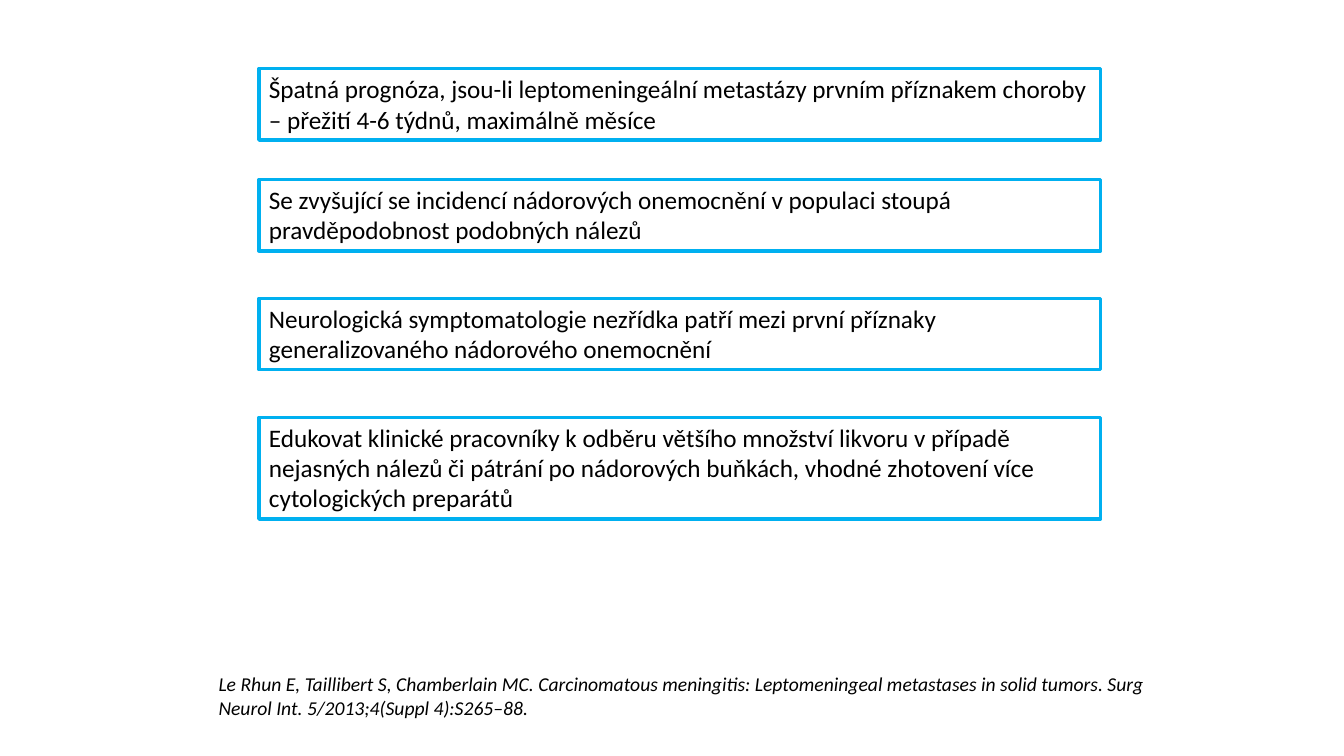
from dataclasses import dataclass

from pptx import Presentation
from pptx.dml.color import RGBColor
from pptx.enum.shapes import MSO_SHAPE
from pptx.enum.text import MSO_ANCHOR, MSO_AUTO_SIZE, PP_ALIGN
from pptx.util import Pt

RECTANGLE = MSO_SHAPE.RECTANGLE
TOP = MSO_ANCHOR.TOP
FIT_SHAPE = MSO_AUTO_SIZE.SHAPE_TO_FIT_TEXT
LEFT = PP_ALIGN.LEFT


@dataclass(frozen=True)
class Theme:
    font: str = "Calibri"
    text: RGBColor = RGBColor(0x00, 0x00, 0x00)
    border: RGBColor = RGBColor(0x00, 0xB0, 0xF0)
    border_width: float = 2.5
    conclusion_size: int = 18
    citation_size: int = 14


THEME = Theme()

CONCLUSION_LEFT = 185
CONCLUSION_WIDTH = 601.2
CONCLUSIONS = [
    (49, 51, "Špatná prognóza, jsou-li leptomeningeální metastázy prvním příznakem choroby "
             "– přežití 4-6 týdnů, maximálně měsíce"),
    (128.2, 51, "Se zvyšující se incidencí nádorových onemocnění v populaci stoupá "
                "pravděpodobnost podobných nálezů"),
    (213.1, 51, "Neurologická symptomatologie nezřídka patří mezi první příznaky "
                "generalizovaného nádorového onemocnění"),
    (298.1, 72.7, "Edukovat klinické pracovníky k odběru většího množství likvoru v případě "
                  "nejasných nálezů či pátrání po nádorových buňkách, vhodné zhotovení více "
                  "cytologických preparátů"),
]
CITATION = (
    "Le Rhun E, Taillibert S, Chamberlain MC. Carcinomatous meningitis: Leptomeningeal "
    "metastases in solid tumors. Surg Neurol Int. 5/2013;4(Suppl 4):S265–88."
)


def write_text(frame, text, size, italic=False):
    frame.word_wrap = True
    frame.auto_size = FIT_SHAPE
    frame.vertical_anchor = TOP
    paragraph = frame.paragraphs[0]
    paragraph.alignment = LEFT
    run = paragraph.add_run()
    run.text = text
    run.font.name = THEME.font
    run.font.size = Pt(size)
    run.font.italic = italic
    run.font.color.rgb = THEME.text


def add_conclusion(slide, top, height, text):
    conclusion = slide.shapes.add_shape(
        RECTANGLE, Pt(CONCLUSION_LEFT), Pt(top), Pt(CONCLUSION_WIDTH), Pt(height)
    )
    conclusion.shadow.inherit = False
    conclusion.fill.background()
    conclusion.line.color.rgb = THEME.border
    conclusion.line.width = Pt(THEME.border_width)
    write_text(conclusion.text_frame, text, THEME.conclusion_size)


def add_citation(slide, text):
    citation = slide.shapes.add_textbox(Pt(149), Pt(476.6), Pt(699.1), Pt(41))
    write_text(citation.text_frame, text, THEME.citation_size, italic=True)


def main():
    presentation = Presentation()
    presentation.slide_width = Pt(960)
    presentation.slide_height = Pt(540)
    slide = presentation.slides.add_slide(presentation.slide_layouts[6])
    for top, height, text in CONCLUSIONS:
        add_conclusion(slide, top, height, text)
    add_citation(slide, CITATION)
    presentation.save("out.pptx")


if __name__ == "__main__":
    main()
